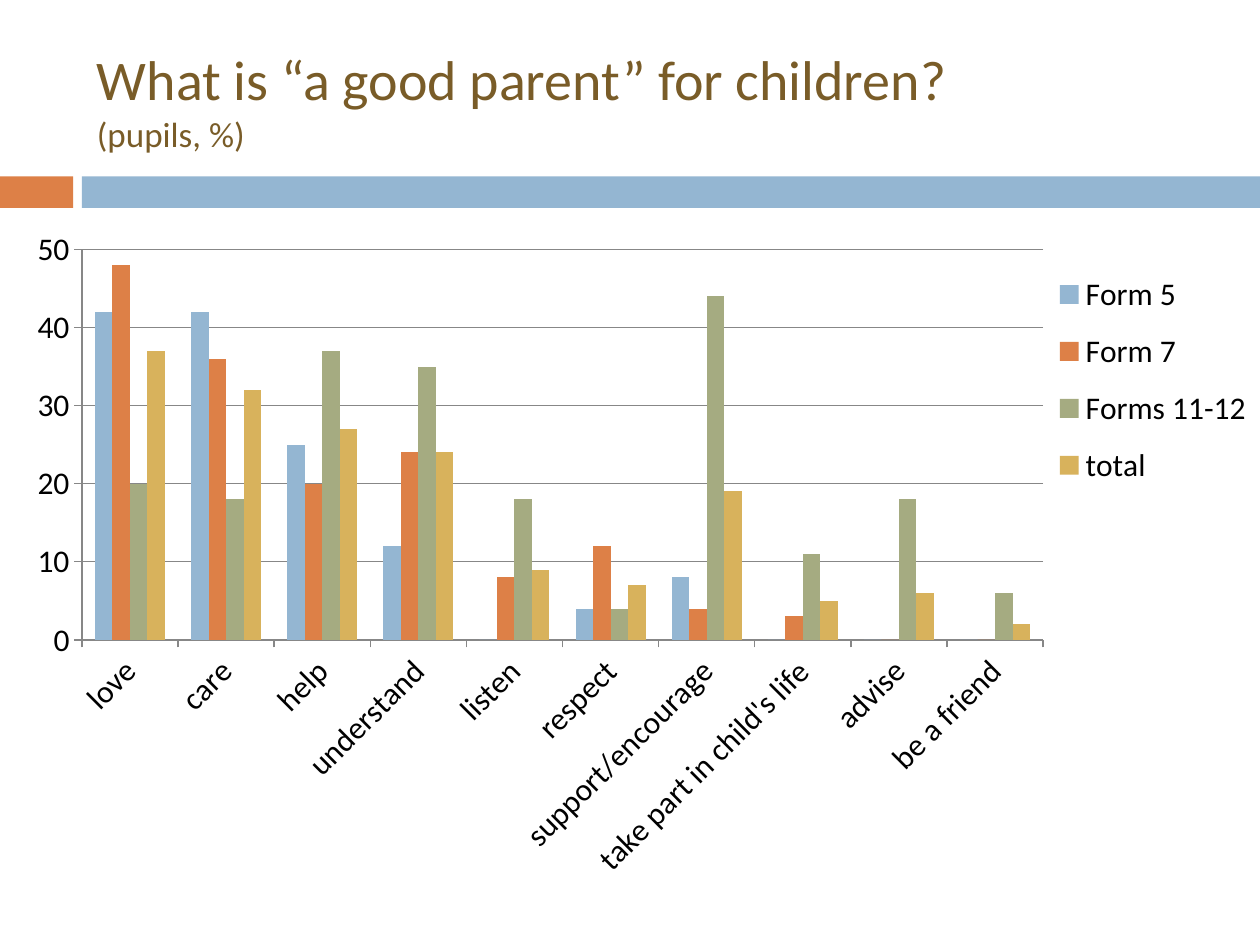
from lxml.etree import SubElement
from pptx import Presentation
from pptx.chart.data import CategoryChartData
from pptx.dml.color import RGBColor
from pptx.enum.chart import XL_CHART_TYPE, XL_LEGEND_POSITION, XL_TICK_MARK
from pptx.enum.shapes import MSO_SHAPE
from pptx.enum.text import MSO_ANCHOR
from pptx.oxml.ns import qn
from pptx.util import Inches, Pt

FONT = "Calibri"
COLORS = {"blue": "94B6D2", "orange": "DD8047", "green": "A5AB81",
          "gold": "D8B25C", "title": "795C28", "text": "000000", "line": "878787"}


def write(paragraph, text, size, color):
    run = paragraph.add_run()
    run.text = text
    run.font.name = FONT
    run.font.size = Pt(size)
    run.font.color.rgb = RGBColor.from_string(COLORS[color])


def place(element, before, **shares):
    """Give a chart part a manual layout in shares of the chart's size."""
    for old in element.findall(qn("c:layout")):
        element.remove(old)
    layout = SubElement(element, qn("c:layout"))
    manual = SubElement(layout, qn("c:manualLayout"))
    for tag, value in shares.items():
        SubElement(manual, qn("c:" + tag)).set("val", str(value))
    element.find(qn(before)).addprevious(layout)


deck = Presentation()
deck.slide_width, deck.slide_height = Inches(10), Inches(7.5)
slide = deck.slides.add_slide(deck.slide_layouts[6])

# Band below the title
for left, width, color in [(0, 0.58, "orange"), (0.65, 9.35, "blue")]:
    band = slide.shapes.add_shape(MSO_SHAPE.RECTANGLE, Inches(left), Inches(1.4),
                                  Inches(width), Inches(0.25))
    band.shadow.inherit = False
    band.fill.solid()
    band.fill.fore_color.rgb = RGBColor.from_string(COLORS[color])
    band.line.fill.background()

# Title
title = slide.shapes.add_textbox(Inches(0.67), Inches(0.25), Inches(8.92), Inches(1.08))
title.text_frame.word_wrap = True
title.text_frame.vertical_anchor = MSO_ANCHOR.MIDDLE
heading = title.text_frame.paragraphs[0]
write(heading, "What is “a good parent” for children?", size=32, color="title")
heading.add_line_break()
write(heading, "(pupils, %)", size=20, color="title")

# Chart data
answers = CategoryChartData()
answers.categories = ["love", "care", "help", "understand", "listen", "respect",
                      "support/encourage", "take part in child's life", "advise",
                      "be a friend"]
groups = [
    ("Form 5", "blue", [42, 42, 25, 12, 0, 4, 8, 0, 0, 0]),
    ("Form 7", "orange", [48, 36, 20, 24, 8, 12, 4, 3, 0, 0]),
    ("Forms 11-12", "green", [20, 18, 37, 35, 18, 4, 44, 11, 18, 6]),
    ("total", "gold", [37, 32, 27, 24, 9, 7, 19, 5, 6, 2]),
]
for name, color, values in groups:
    answers.add_series(name, values)

# Chart
chart = slide.shapes.add_chart(XL_CHART_TYPE.COLUMN_CLUSTERED, 0, Inches(1.75),
                               Inches(10), Inches(5.75), answers).chart
chart.has_title = False
chart.font.name = FONT
chart.font.size = Pt(18)
chart.font.color.rgb = RGBColor.from_string(COLORS["text"])
plot = chart.plots[0]
plot.gap_width = 150
plot.overlap = 0
plot.vary_by_categories = False
for series, (name, color, values) in zip(plot.series, groups):
    series.format.fill.solid()
    series.format.fill.fore_color.rgb = RGBColor.from_string(COLORS[color])

# Axes
scale = chart.value_axis
scale.minimum_scale, scale.maximum_scale, scale.major_unit = 0, 50, 10
scale.has_major_gridlines = True
for axis in (chart.category_axis, scale):
    axis.major_tick_mark = XL_TICK_MARK.OUTSIDE
    axis.tick_labels.font.size = Pt(18)
for ruled in (chart.category_axis, scale, scale.major_gridlines):
    ruled.format.line.color.rgb = RGBColor.from_string(COLORS["line"])
    ruled.format.line.width = Pt(0.75)
label_body = chart.category_axis._element.find(qn("c:txPr")).find(qn("a:bodyPr"))
label_body.set("rot", str(-45 * 60000))
label_body.set("vert", "horz")

# Legend and plot area positions
chart.has_legend = True
chart.legend.position = XL_LEGEND_POSITION.RIGHT
chart.legend.include_in_layout = False
chart.legend.font.size = Pt(18)
place(chart.legend._element, "c:overlay", xMode="edge", yMode="edge",
      x=0.83, y=0.05, w=0.17, h=0.34)
place(chart._chartSpace.chart.plotArea, "c:barChart", layoutTarget="inner",
      xMode="edge", yMode="edge", x=0.065, y=0.04, w=0.763, h=0.539)

deck.save("out.pptx")
